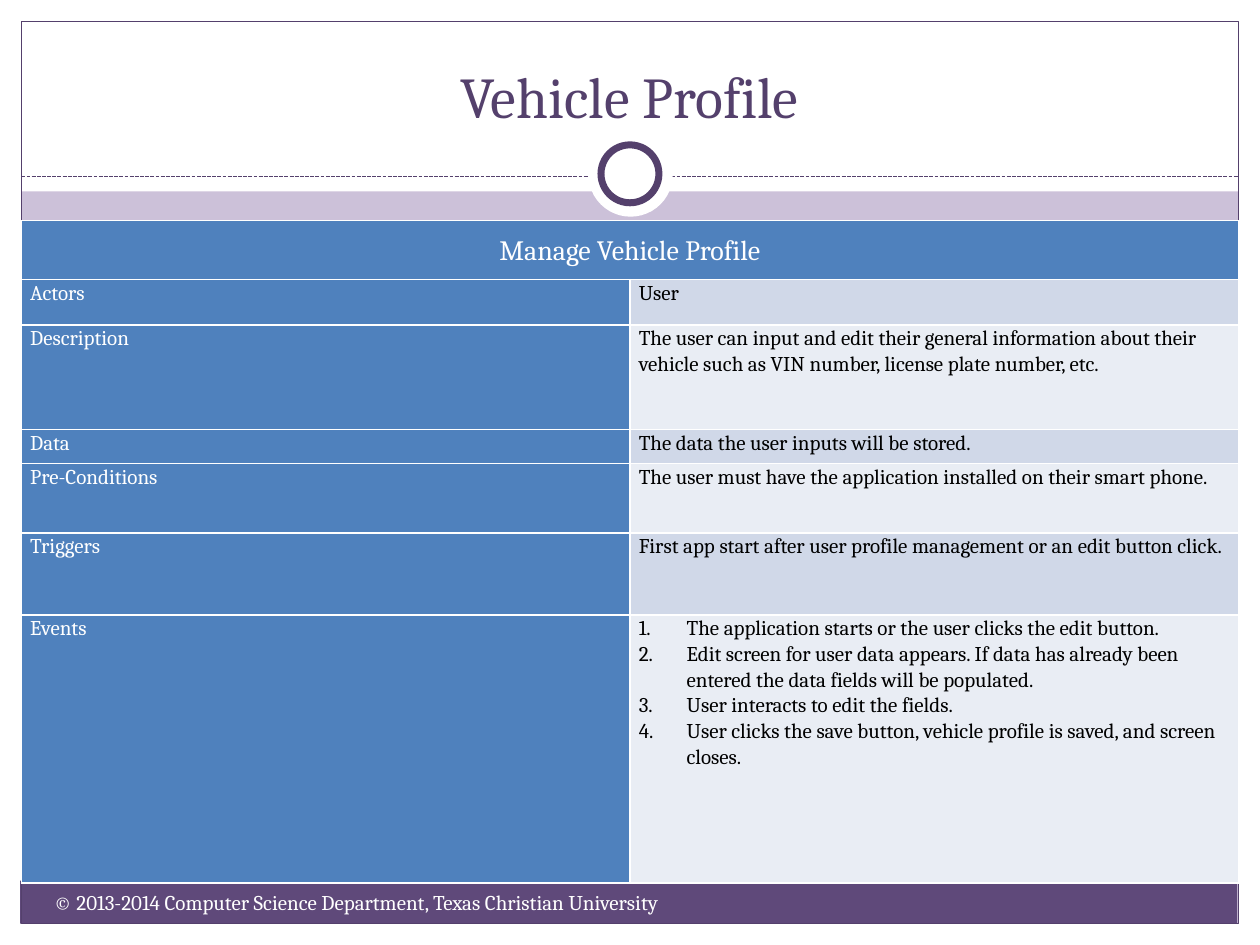
from lxml.etree import SubElement
from pptx import Presentation
from pptx.dml.color import RGBColor
from pptx.enum.dml import MSO_LINE
from pptx.enum.shapes import MSO_CONNECTOR, MSO_SHAPE
from pptx.enum.text import MSO_ANCHOR, MSO_AUTO_SIZE, PP_ALIGN
from pptx.oxml import parse_xml
from pptx.oxml.ns import nsdecls, qn
from pptx.util import Inches, Pt

PLUM, GRAPE, LILAC = "54406C", "5F497A", "CCC1D9"
BLUE, WHITE, BLACK = "4F81BD", "FFFFFF", "000000"
BANDS = ["D0D8E8", "E9EDF4"]

ROWS = [
    ("Actors", ["User"]),
    ("Description", ["The user can input and edit their general information about their "
                     "vehicle such as VIN number, license plate number, etc."]),
    ("Data", ["The data the user inputs will be stored."]),
    ("Pre-Conditions", ["The user must have the application installed on their smart phone."]),
    ("Triggers", ["First app start after user profile management or an edit button click."]),
    ("Events", ["The application starts or the user clicks the edit button.",
                "Edit screen for user data appears. If data has already been entered "
                "the data fields will be populated.",
                "User interacts to edit the fields.",
                "User clicks the save button, vehicle profile is saved, and screen closes."]),
]
HEIGHTS = [0.47, 0.36, 0.83, 0.27, 0.55, 0.65, 2.13]


def color(code):
    return RGBColor.from_string(code)


def apply(target, values):
    for name, value in values.items():
        setattr(target, name, value)


class Deck:
    font = {"name": "Cambria", "bold": False}
    inset = {"margin_left": Inches(0.07), "margin_right": Inches(0.07),
             "margin_top": 0, "margin_bottom": 0}

    def __init__(self, wide, high):
        self.file = Presentation()
        apply(self.file, {"slide_width": Inches(wide), "slide_height": Inches(high)})
        self.slide = self.file.slides.add_slide(self.file.slide_layouts[5])
        self.shapes = self.slide.shapes

    def back(self, code):
        fill = self.slide.background.fill
        fill.solid()
        fill.fore_color.rgb = color(code)

    def shape(self, kind, box, fill=None, line=None, width=0.75):
        item = self.shapes.add_shape(kind, *map(Inches, box))
        item.shadow.inherit = False
        if fill:
            item.fill.solid()
            item.fill.fore_color.rgb = color(fill)
        else:
            item.fill.background()
        if line:
            item.line.color.rgb = color(line)
            item.line.width = Pt(width)
        else:
            item.line.fill.background()

    def rule(self, ends, code):
        item = self.shapes.add_connector(MSO_CONNECTOR.STRAIGHT, *map(Inches, ends))
        item.line.color.rgb = color(code)
        apply(item.line, {"width": Pt(0.75), "dash_style": MSO_LINE.SQUARE_DOT})
        SubElement(item._element.spPr, qn("a:effectLst"))

    def words(self, frame, lines, size, code, **form):
        for i, line in enumerate(lines):
            para = frame.paragraphs[0] if i == 0 else frame.add_paragraph()
            apply(para, form)
            run = para.add_run()
            run.text = line
            apply(run.font, {**self.font, "size": Pt(size)})
            run.font.color.rgb = color(code)

    def title(self, box, text):
        item = self.shapes.title
        sides = ("left", "top", "width", "height")
        apply(item, dict(zip(sides, map(Inches, box))))
        apply(item.text_frame, {"word_wrap": True, "auto_size": MSO_AUTO_SIZE.NONE,
                                "vertical_anchor": MSO_ANCHOR.BOTTOM})
        self.words(item.text_frame, [text], 33, PLUM, alignment=PP_ALIGN.CENTER)
        self.shapes._spTree.append(item._element)

    def text(self, box, text):
        frame = self.shapes.add_textbox(*map(Inches, box)).text_frame
        frame.word_wrap = True
        self.words(frame, [text], 12, WHITE)

    def cell(self, cell, lines, back, code, size=12, **form):
        apply(cell, self.inset)
        cell.fill.solid()
        cell.fill.fore_color.rgb = color(back)
        self.words(cell.text_frame, lines, size, code, line_spacing=1.07, **form)
        props = cell._tc.get_or_add_tcPr()
        for i, side in enumerate("LRTB"):
            props.insert(i, parse_xml(
                f'<a:ln{side} {nsdecls("a")} w="{Pt(1)}"><a:solidFill>'
                f'<a:srgbClr val="{WHITE}"/></a:solidFill></a:ln{side}>'))

    def number(self, cell):
        for para in cell.text_frame.paragraphs:
            props = para._p.get_or_add_pPr()
            props.set("marL", str(Inches(0.38)))
            props.set("indent", str(-Inches(0.38)))
            SubElement(props, qn("a:buFont"), typeface="+mj-lt")
            SubElement(props, qn("a:buAutoNum"), type="arabicPeriod")

    def table(self, box, head, rows, heights):
        grid = self.shapes.add_table(len(heights), 2, *map(Inches, box)).table
        for row, high in zip(grid.rows, heights):
            row.height = Inches(high)
        top = grid.cell(0, 0)
        top.merge(grid.cell(0, 1))
        self.cell(top, [head], BLUE, WHITE, 16, alignment=PP_ALIGN.CENTER)
        top.vertical_anchor = MSO_ANCHOR.MIDDLE
        for i, (label, lines) in enumerate(rows):
            self.cell(grid.cell(i + 1, 0), [label], BLUE, WHITE)
            cell = grid.cell(i + 1, 1)
            self.cell(cell, lines, BANDS[i % 2], BLACK)
            if len(lines) > 1:
                self.number(cell)


def main():
    deck = Deck(10, 7.5)
    deck.back(LILAC)
    for box in [(0, 7.33, 10, 0.17), (0, 0, 10, 1.52),
                (0, 0, 0.17, 7.5), (9.83, 0, 0.17, 7.5)]:
        deck.shape(MSO_SHAPE.RECTANGLE, box, WHITE)
    deck.shape(MSO_SHAPE.RECTANGLE, (0.16, 6.99, 9.66, 0.34), GRAPE)
    deck.shape(MSO_SHAPE.RECTANGLE, (0.17, 0.17, 9.66, 7.16), line=PLUM)
    deck.rule((0.17, 1.4, 9.83, 1.4), PLUM)
    deck.shape(MSO_SHAPE.OVAL, (4.67, 1.05, 0.67, 0.67), WHITE)
    deck.shape(MSO_SHAPE.OVAL, (4.77, 1.15, 0.46, 0.46), WHITE, PLUM, 4)
    deck.title((0.33, 0.25, 9.33, 0.83), "Vehicle Profile")
    deck.text((0.33, 7.01, 5.58, 0.4),
              "© 2013-2014 Computer Science Department, Texas Christian University")
    deck.table((0.17, 1.75, 9.66, 5.26), "Manage Vehicle Profile", ROWS, HEIGHTS)
    deck.file.save("out.pptx")


if __name__ == "__main__":
    main()
